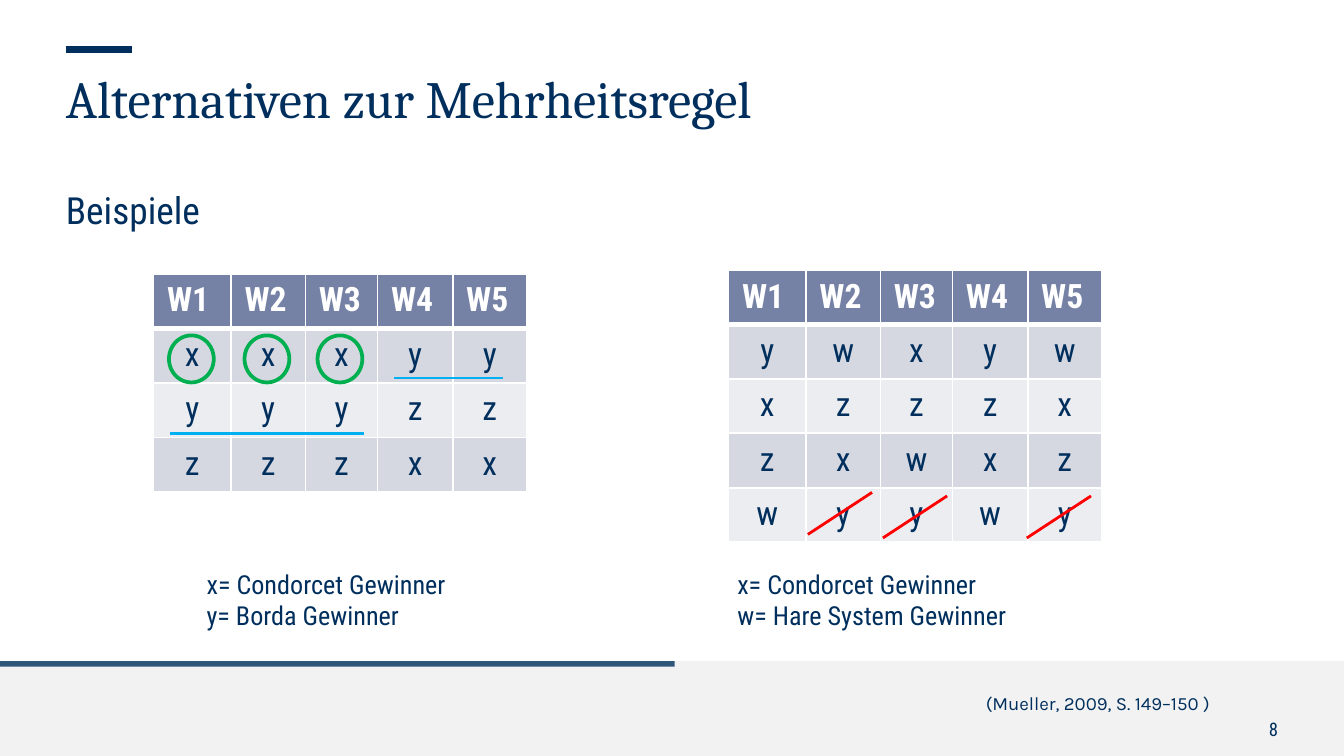
from lxml.etree import SubElement
from pptx import Presentation
from pptx.dml.color import RGBColor
from pptx.enum.shapes import MSO_CONNECTOR, MSO_SHAPE
from pptx.enum.text import PP_ALIGN
from pptx.oxml.ns import qn
from pptx.util import Pt

NAVY = "002F5D"
WHITE = "FFFFFF"
GREEN = "00B050"
BLUE = "00B0F0"
RED = "FF0000"
HEADER = "7682A5"
BANDS = ("D6D8E1", "ECEDF0")
BODY_FONT = "Roboto Condensed"
COLUMNS = (41.5, 39.8, 38.7, 40.3, 39.7)
ROW = 29.2


def color(value):
    """Turn a hex string into a colour."""
    return RGBColor.from_string(value)


def format_paragraph(p, size, font=BODY_FONT, hex_color=NAVY, bold=False, align=PP_ALIGN.LEFT):
    """Format every run of a paragraph."""
    p.alignment = align
    for r in p.runs:
        r.font.size = Pt(size)
        r.font.name = font
        r.font.bold = bold
        r.font.color.rgb = color(hex_color)


def add_text(s, text, left, top, width, height, size, **style):
    """Add a text box without insets."""
    tf = s.shapes.add_textbox(Pt(left), Pt(top), Pt(width), Pt(height)).text_frame
    tf.word_wrap = True
    tf.margin_left = tf.margin_top = tf.margin_right = tf.margin_bottom = 0
    tf.text = text
    for p in tf.paragraphs:
        format_paragraph(p, size, **style)


def add_bar(s, left, top, width, height, fill, alpha=None):
    """Add a filled rectangle without outline."""
    sp = s.shapes.add_shape(MSO_SHAPE.RECTANGLE, Pt(left), Pt(top), Pt(width), Pt(height))
    sp.shadow.inherit = False
    sp.line.fill.background()
    sp.fill.solid()
    sp.fill.fore_color.rgb = color(fill)
    if alpha:
        srgb = sp.fill._xPr.find(".//" + qn("a:srgbClr"))
        SubElement(srgb, qn("a:alpha"), val=str(alpha * 1000))


def add_ring(s, left, top, width, height):
    """Add a green ring that marks a winner."""
    sp = s.shapes.add_shape(MSO_SHAPE.OVAL, Pt(left), Pt(top), Pt(width), Pt(height))
    sp.shadow.inherit = False
    sp.fill.background()
    sp.line.color.rgb = color(GREEN)
    sp.line.width = Pt(2)


def add_line(s, x1, y1, x2, y2, hex_color, width=1.5):
    """Add a straight line without shadow."""
    line = s.shapes.add_connector(MSO_CONNECTOR.STRAIGHT, Pt(x1), Pt(y1), Pt(x2), Pt(y2))
    line.line.color.rgb = color(hex_color)
    line.line.width = Pt(width)
    SubElement(line._element.spPr, qn("a:effectLst"))


def style_cell(cell, fill, bottom, top):
    """Give a cell white borders and a fill."""
    tc_pr = cell._tc.get_or_add_tcPr()
    for side, width in (("L", 1), ("R", 1), ("T", top), ("B", bottom)):
        ln = SubElement(tc_pr, qn("a:ln" + side), w=str(Pt(width)))
        SubElement(SubElement(ln, qn("a:solidFill")), qn("a:srgbClr"), val=WHITE)
    cell.fill.solid()
    cell.fill.fore_color.rgb = color(fill)


def add_ranking(s, left, top, header_height, rankings):
    """Add a table of voter preferences, one string per rank."""
    rows = [[f"W{i}" for i in range(1, 6)], *rankings]
    heights = [header_height] + [ROW] * len(rankings)
    table = s.shapes.add_table(len(rows), len(COLUMNS), Pt(left), Pt(top),
                               Pt(sum(COLUMNS)), Pt(sum(heights))).table
    for column, width in zip(table.columns, COLUMNS):
        column.width = Pt(width)
    for i, (values, height) in enumerate(zip(rows, heights)):
        table.rows[i].height = Pt(height)
        for j, value in enumerate(values):
            cell = table.cell(i, j)
            p = cell.text_frame.paragraphs[0]
            p.text = value
            if i == 0:
                style_cell(cell, HEADER, bottom=3, top=1)
                format_paragraph(p, 18, hex_color=WHITE, bold=True)
            else:
                style_cell(cell, BANDS[(i - 1) % 2], bottom=1, top=3 if i == 1 else 1)
                format_paragraph(p, 18, align=PP_ALIGN.CENTER)


def add_frame(s):
    """Add the footer, the accent line and the page number."""
    add_bar(s, 0, 354.2, 720, 50.8, "F2F2F2")
    add_text(s, "8", 648.7, 384.5, 36, 12.2, 10, align=PP_ALIGN.RIGHT)
    add_bar(s, 0, 354.2, 361.4, 3, NAVY, alpha=80)
    add_line(s, 35.3, 26.6, 70.6, 26.6, NAVY, 3.5)


def main():
    """Build and save the slide."""
    prs = Presentation()
    prs.slide_width, prs.slide_height = Pt(720), Pt(405)
    s = prs.slides.add_slide(prs.slide_layouts[6])
    add_frame(s)
    add_text(s, "(Mueller, 2009, S. 149–150 )", 236.2, 370.8, 411.8, 13, 10,
             font="Karla", align=PP_ALIGN.RIGHT)
    add_text(s, "Alternativen zur Mehrheitsregel", 35.3, 35.3, 662.4, 64.8, 28, font="Cambria")
    add_text(s, "Beispiele", 35.3, 100.5, 662.4, 24, 20)
    add_text(s, "x= Condorcet Gewinner\ny= Borda Gewinner", 110.7, 304.5, 200, 34, 14)
    add_text(s, "x= Condorcet Gewinner\nw= Hare System Gewinner", 395, 304.5, 200, 34, 14)

    add_ranking(s, 82.3, 146.8, ROW, ["xxxyy", "yyyzz", "zzzxx"])
    for left in (90.5, 131, 170.1):
        add_ring(s, left, 179.7, 24, 25.2)
    add_line(s, 91, 232.3, 195, 232.3, BLUE)
    add_line(s, 211, 202.5, 269.3, 202.5, BLUE)

    add_ranking(s, 390.3, 144.9, 26, ["ywxyw", "xzzzx", "zxwxz", "wyywy"])
    for left, bottom in ((432.8, 286.3), (473, 288.2), (550.1, 288.2)):
        add_line(s, left, bottom, left + 34.4, bottom - 22.5, RED)
    prs.save("out.pptx")


if __name__ == "__main__":
    main()
